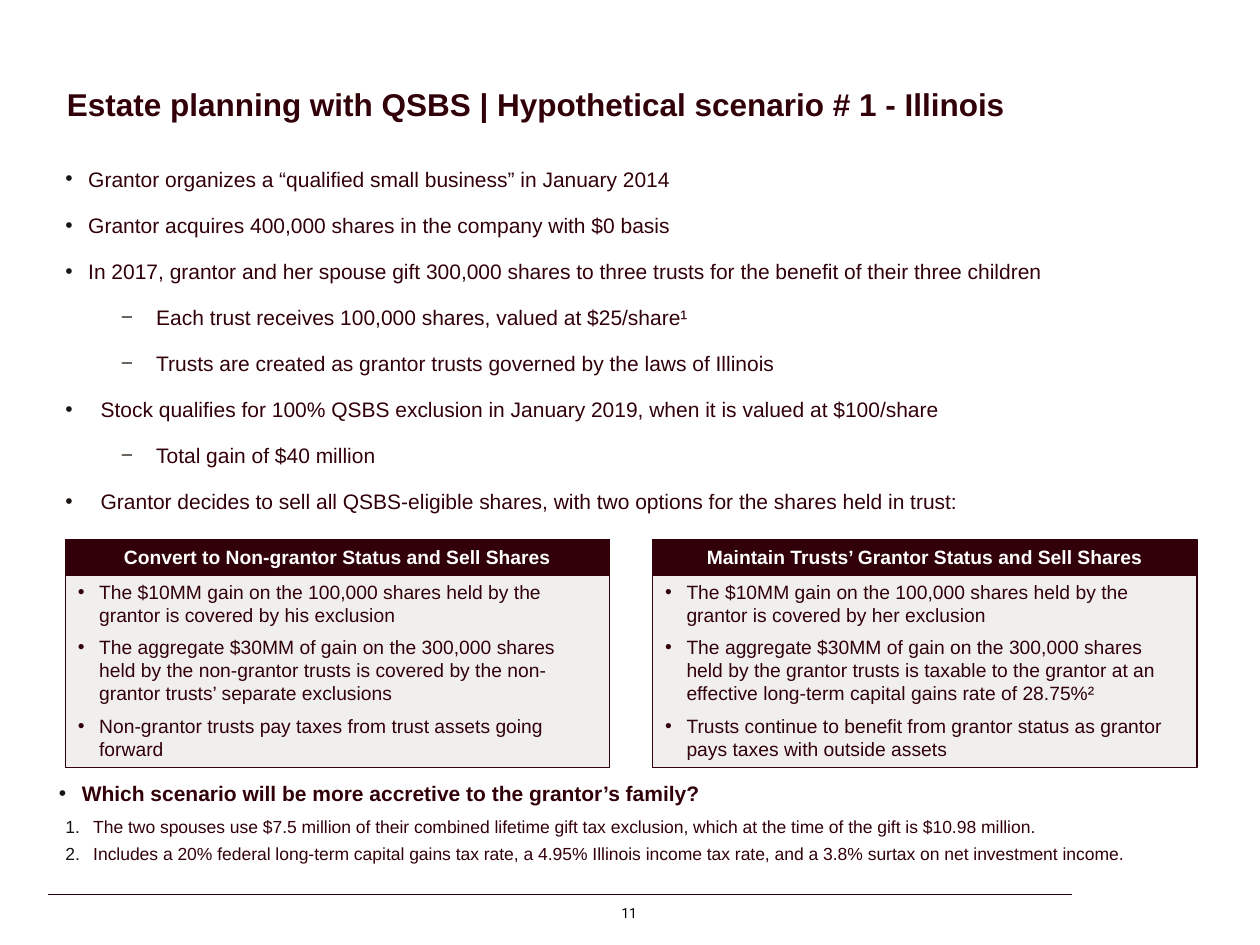
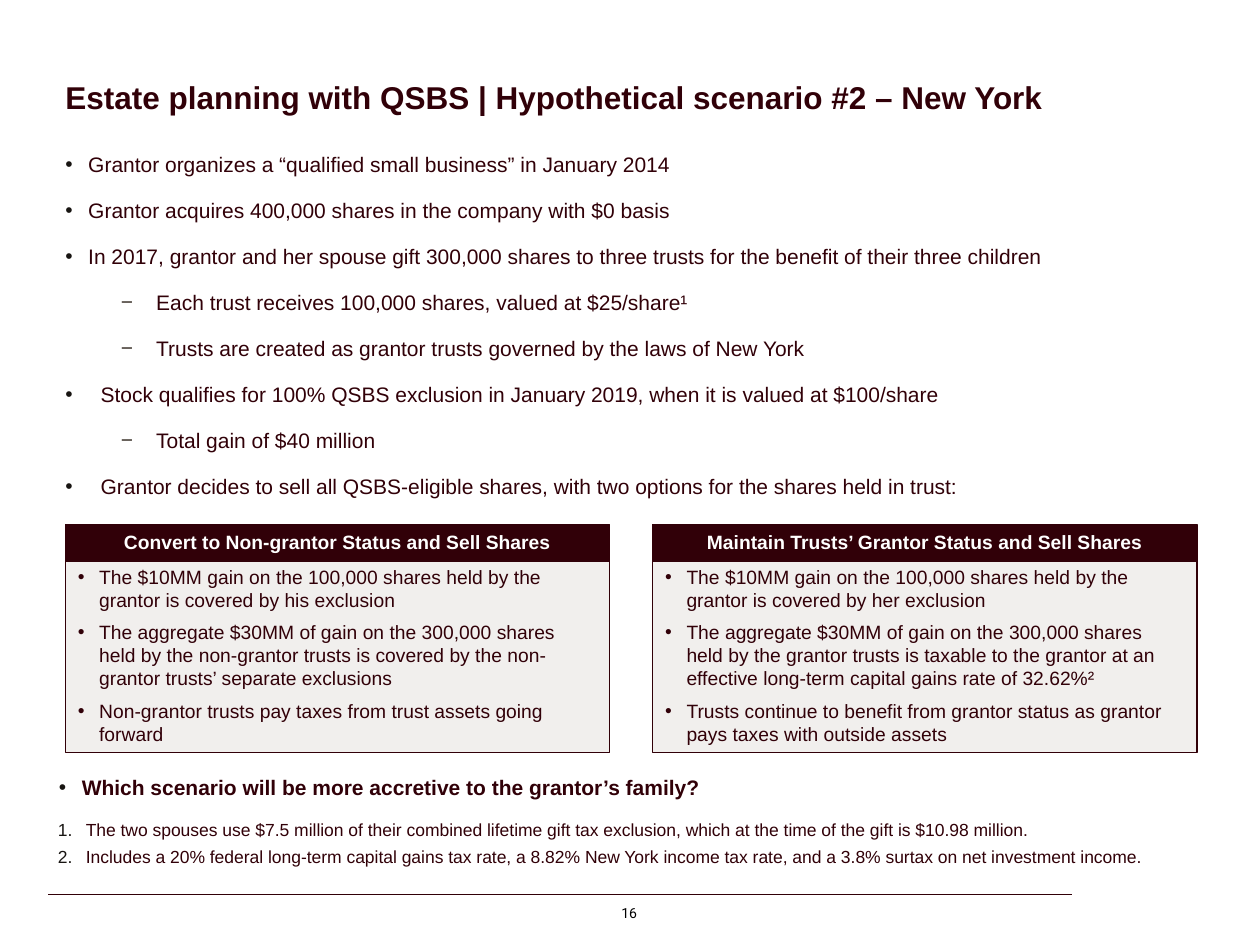
from dataclasses import dataclass
from typing import NamedTuple

from lxml import etree
from pptx import Presentation
from pptx.dml.color import RGBColor
from pptx.enum.shapes import MSO_CONNECTOR, MSO_SHAPE
from pptx.enum.text import MSO_ANCHOR, MSO_AUTO_SIZE, PP_ALIGN
from pptx.oxml.ns import qn
from pptx.util import Cm, Pt

RECTANGLE, STRAIGHT = MSO_SHAPE.RECTANGLE, MSO_CONNECTOR.STRAIGHT
TOP, MIDDLE, BOTTOM = MSO_ANCHOR.TOP, MSO_ANCHOR.MIDDLE, MSO_ANCHOR.BOTTOM
LEFT, CENTER = PP_ALIGN.LEFT, PP_ALIGN.CENTER
NO_AUTOFIT = MSO_AUTO_SIZE.NONE

MAROON, STONE, WHITE, BLACK = "310008", "F1EFED", "FFFFFF", "000000"
BULLET_DARK, DASH_BROWN = "181512", "3C342C"

# Shared measures in centimetres
MARGIN, CONTENT_WIDTH = 1.32, 22.81
CARD_WIDTH, CARD_GAP = 10.97, 0.87
HEADER_HEIGHT, CARD_BODY_OFFSET, CARD_BODY_HEIGHT = 0.74, 0.69, 3.91
NUMBERED = "arabicPeriod"


class Bullet(NamedTuple):
    mark: str
    margin: float
    hanging: float
    color: str


POINT = Bullet("•", 0.46, 0.46, BULLET_DARK)
WIDE_POINT = Bullet("•", 0.71, 0.71, BULLET_DARK)
DASH = Bullet("−", 1.83, 0.71, DASH_BROWN)
CARD_POINT = Bullet("•", 0.43, 0.43, MAROON)
REFERENCE = Bullet(NUMBERED, 0.56, 0.56, BULLET_DARK)


class Item(NamedTuple):
    text: str
    bullet: Bullet | None = None


class Box(NamedTuple):
    left: float
    top: float
    width: float
    height: float


@dataclass
class Scenario:
    page: int
    title: str
    state: str
    state_rate: str
    total_rate: str
    title_at: tuple[float, float]
    facts_top: float
    cards_top: float
    question_top: float
    references_at: tuple[float, float]


SCENARIOS = [
    Scenario(11, "Estate planning with QSBS | Hypothetical scenario # 1 - Illinois",
             "Illinois", "4.95%", "28.75%",
             (1.35, 1.4), 3.25, 10.87, 15.6, (1.32, 16.66)),
    Scenario(16, "Estate planning with QSBS | Hypothetical scenario #2 – New York",
             "New York", "8.82%", "32.62%",
             (1.32, 1.27), 2.95, 10.57, 15.49, (1.17, 16.71)),
]


def rgb(color: str) -> RGBColor:
    return RGBColor.from_string(color)


def add_bullet(paragraph, bullet: Bullet) -> None:
    props = paragraph._p.get_or_add_pPr()
    props.set("marL", str(Cm(bullet.margin)))
    props.set("indent", str(-Cm(bullet.hanging)))
    color = etree.SubElement(props, qn("a:buClr"))
    etree.SubElement(color, qn("a:srgbClr"), val=bullet.color)
    etree.SubElement(props, qn("a:buFont"), typeface="Arial")
    if bullet.mark == NUMBERED:
        etree.SubElement(props, qn("a:buAutoNum"), type=NUMBERED)
    else:
        etree.SubElement(props, qn("a:buChar"), char=bullet.mark)


def write(shape, items: list[Item], *, size: float, color: str = MAROON, font: str = "Arial",
          bold: bool = False, align=LEFT, anchor=TOP, before: float = 0, after: float = 0,
          line_spacing: float | None = None, wrap: bool = True,
          insets: tuple[float, float, float, float] = (0, 0, 0, 0)) -> None:
    """Fill a shape with paragraphs; insets run left, top, right, bottom."""
    frame = shape.text_frame
    frame.auto_size = NO_AUTOFIT
    frame.word_wrap = wrap
    frame.vertical_anchor = anchor
    (frame.margin_left, frame.margin_top,
     frame.margin_right, frame.margin_bottom) = map(Cm, insets)
    for index, item in enumerate(items):
        paragraph = frame.add_paragraph() if index else frame.paragraphs[0]
        if item.bullet:
            add_bullet(paragraph, item.bullet)
        paragraph.alignment = align
        paragraph.space_before = Pt(before if index else 0)
        paragraph.space_after = Pt(after)
        if line_spacing:
            paragraph.line_spacing = line_spacing
        run = paragraph.add_run()
        run.text = item.text
        run.font.name, run.font.size, run.font.bold = font, Pt(size), bold
        run.font.color.rgb = rgb(color)


def add_text(slide, box: Box, items: list[Item], **text_format) -> None:
    write(slide.shapes.add_textbox(*map(Cm, box)), items, **text_format)


def add_panel(slide, box: Box, fill: str, items: list[Item], **text_format) -> None:
    panel = slide.shapes.add_shape(RECTANGLE, *map(Cm, box))
    panel.shadow.inherit = False
    panel.fill.solid()
    panel.fill.fore_color.rgb = rgb(fill)
    panel.line.color.rgb = rgb(MAROON)
    panel.line.width = Pt(0.75)
    write(panel, items, size=11, insets=(0.25, 0.13, 0.25, 0.13), **text_format)


def add_option(slide, column: int, top: float, heading: str, points: list[str]) -> None:
    left = MARGIN + column * (CARD_WIDTH + CARD_GAP)
    add_panel(slide, Box(left, top + CARD_BODY_OFFSET, CARD_WIDTH, CARD_BODY_HEIGHT), STONE,
              [Item(point, CARD_POINT) for point in points], after=5.3)
    add_panel(slide, Box(left, top, CARD_WIDTH, HEADER_HEIGHT), MAROON,
              [Item(heading)], color=WHITE, bold=True, align=CENTER)


def add_footer(slide, page: int) -> None:
    rule = slide.shapes.add_connector(STRAIGHT, Cm(0.97), Cm(18.03), Cm(21.62), Cm(18.03))
    rule.line.color.rgb = rgb(MAROON)
    rule.line.width = Pt(0.5)
    etree.SubElement(rule._element.spPr, qn("a:effectLst"))
    add_text(slide, Box(12.14, 18.08, 1.09, 0.64), [Item(str(page))], size=8,
             font="Roboto", color=BLACK, align=CENTER, anchor=MIDDLE, wrap=False)


def add_title(slide, title: str, position: tuple[float, float]) -> None:
    heading = slide.shapes.title
    heading.left, heading.top = map(Cm, position)
    heading.width, heading.height = Cm(CONTENT_WIDTH), Cm(1.09)
    write(heading, [Item(title)], size=18, bold=True, anchor=BOTTOM, line_spacing=0.95)


def build_scenario(deck, scenario: Scenario) -> None:
    slide = deck.slides.add_slide(deck.slide_layouts[5])
    add_footer(slide, scenario.page)
    add_title(slide, scenario.title, scenario.title_at)

    # Facts of the scenario
    facts = [
        Item("Grantor organizes a “qualified small business” in January 2014", POINT),
        Item("Grantor acquires 400,000 shares in the company with $0 basis", POINT),
        Item("In 2017, grantor and her spouse gift 300,000 shares to three trusts "
             "for the benefit of their three children", POINT),
        Item("Each trust receives 100,000 shares, valued at $25/share¹", DASH),
        Item("Trusts are created as grantor trusts governed by the laws of "
             f"{scenario.state}", DASH),
        Item("Stock qualifies for 100% QSBS exclusion in January 2019, "
             "when it is valued at $100/share", WIDE_POINT),
        Item("Total gain of $40 million", DASH),
        Item("Grantor decides to sell all QSBS-eligible shares, "
             "with two options for the shares held in trust:", WIDE_POINT),
    ]
    add_text(slide, Box(MARGIN, scenario.facts_top, CONTENT_WIDTH, 7.09), facts,
             size=12, before=6.6, after=5.3, insets=(0, 0.1, 0.23, 0.1))

    # Two options side by side
    own_gain = "The $10MM gain on the 100,000 shares held by the grantor is covered by"
    trust_gain = "The aggregate $30MM of gain on the 300,000 shares held by the"
    options = [
        ("Convert to Non-grantor Status and Sell Shares", [
            f"{own_gain} his exclusion",
            f"{trust_gain} non-grantor trusts is covered by the non-grantor "
            "trusts’ separate exclusions",
            "Non-grantor trusts pay taxes from trust assets going forward"]),
        ("Maintain Trusts’ Grantor Status and Sell Shares", [
            f"{own_gain} her exclusion",
            f"{trust_gain} grantor trusts is taxable to the grantor at an effective "
            f"long-term capital gains rate of {scenario.total_rate}²",
            "Trusts continue to benefit from grantor status as grantor pays taxes "
            "with outside assets"]),
    ]
    for column, (heading, points) in enumerate(options):
        add_option(slide, column, scenario.cards_top, heading, points)

    # Closing question and numbered references
    add_text(slide, Box(1.19, scenario.question_top, 22.94, 0.81),
             [Item("Which scenario will be more accretive to the grantor’s family?", POINT)],
             size=12, bold=True, after=5.3, insets=(0, 0.13, 0.25, 0.13))
    references = [
        "The two spouses use $7.5 million of their combined lifetime gift tax exclusion, "
        "which at the time of the gift is $10.98 million.",
        f"Includes a 20% federal long-term capital gains tax rate, a {scenario.state_rate} "
        f"{scenario.state} income tax rate, and a 3.8% surtax on net investment income.",
    ]
    add_text(slide, Box(*scenario.references_at, CONTENT_WIDTH, 0.86),
             [Item(reference, REFERENCE) for reference in references],
             size=10, anchor=BOTTOM, after=3.3, insets=(0, 0.1, 0, 0.1))


def main() -> None:
    deck = Presentation()
    deck.slide_width, deck.slide_height = Cm(25.4), Cm(19.05)
    for scenario in SCENARIOS:
        build_scenario(deck, scenario)
    deck.save("out.pptx")


if __name__ == "__main__":
    main()
